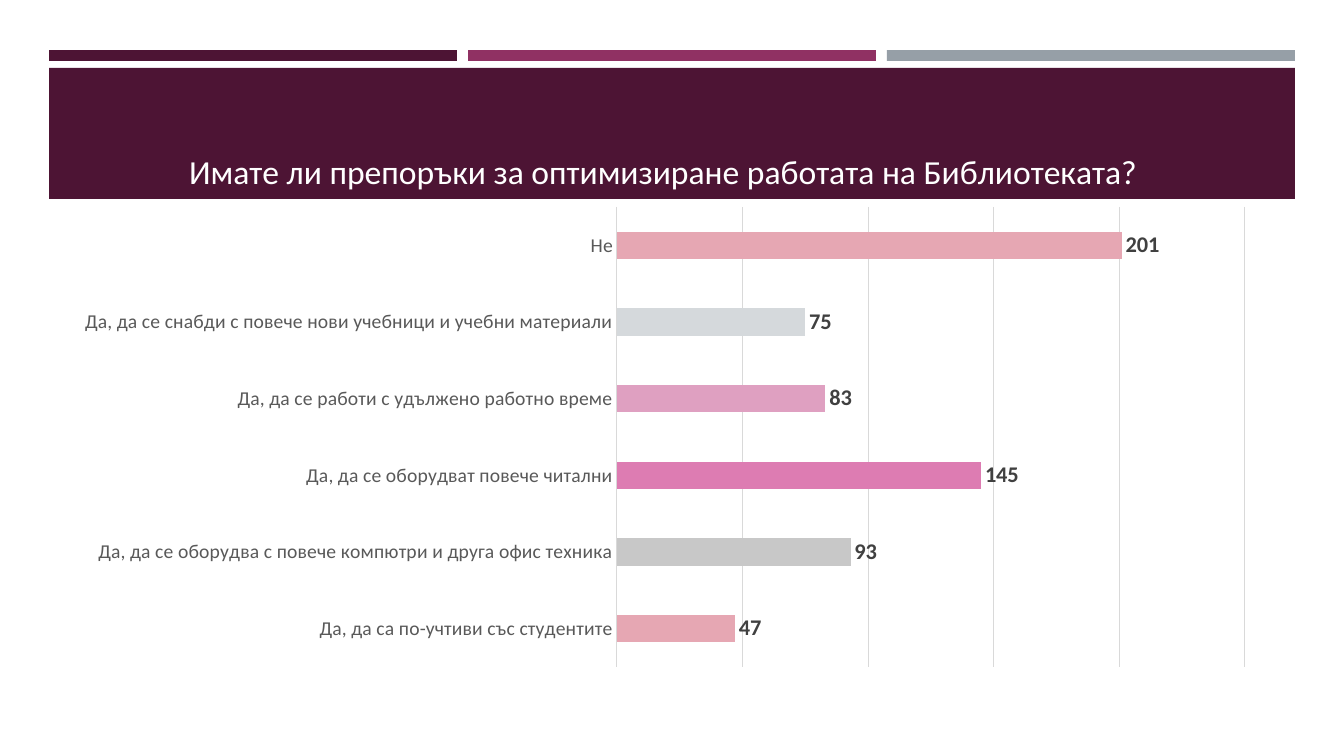
from dataclasses import dataclass

from lxml.etree import SubElement
from pptx import Presentation
from pptx.chart.chart import Chart
from pptx.chart.data import CategoryChartData
from pptx.dml.color import RGBColor
from pptx.enum.chart import XL_CHART_TYPE as ChartType
from pptx.enum.chart import XL_LABEL_POSITION as LabelPosition
from pptx.enum.chart import XL_TICK_LABEL_POSITION as TickLabelPosition
from pptx.enum.chart import XL_TICK_MARK as TickMark
from pptx.enum.shapes import MSO_SHAPE as Preset
from pptx.oxml.ns import qn
from pptx.slide import Slide
from pptx.util import Emu, Pt

EMU_PER_PX = 914400 / 100.8


@dataclass(frozen=True)
class Theme:
    plum: str = "4D1434"
    berry: str = "903163"
    slate: str = "969FA7"
    white: str = "FFFFFF"
    black: str = "000000"
    grid: str = "D9D9D9"
    category_text: str = "595959"
    value_text: str = "404040"
    rose: str = "E6A7B3"
    silver: str = "C8C8C8"
    pink: str = "DD7CB2"
    orchid: str = "DFA0C1"
    mist: str = "D5D9DC"
    chart_font: str = "Cabin"
    label_font: str = "Calibri"
    base_size: int = 10
    category_size: int = 14
    value_size: int = 16
    title_size: int = 24
    hairline: float = 0.75


@dataclass(frozen=True)
class Box:
    left: int
    top: int
    width: int
    height: int

    def emu(self) -> tuple[Emu, Emu, Emu, Emu]:
        return px(self.left), px(self.top), px(self.width), px(self.height)


@dataclass(frozen=True)
class Band:
    box: Box
    color: str


@dataclass(frozen=True)
class Answer:
    text: str
    count: int
    color: str


THEME = Theme()
STRIPE_PITCH = 419
STRIPE_COLORS = (THEME.plum, THEME.berry, THEME.slate)
BANDS = [
    Band(Box(49 + column * STRIPE_PITCH, 50, 408, 11), color)
    for column, color in enumerate(STRIPE_COLORS)
] + [Band(Box(49, 68, 1246, 131), THEME.plum)]

CHART_BOX = Box(60, 129, 1209, 549)
PLOT_BOX = Box(617, 207, 628, 460)
TITLE_BOX = Box(183, 143, 962, 56)
TITLE = "Имате ли препоръки за оптимизиране работата на Библиотеката?"
ANSWERS = [
    Answer("Да, да са по-учтиви със студентите", 47, THEME.rose),
    Answer("Да, да се оборудва с повече компютри и друга офис техника", 93, THEME.silver),
    Answer("Да, да се оборудват повече читални", 145, THEME.pink),
    Answer("Да, да се работи с удължено работно време", 83, THEME.orchid),
    Answer("Да, да се снабди с повече нови учебници и учебни материали", 75, THEME.mist),
    Answer("Не", 201, THEME.rose),
]


def px(length: int) -> Emu:
    return Emu(round(length * EMU_PER_PX))


def rgb(color: str) -> RGBColor:
    return RGBColor.from_string(color)


def style_font(font, size: int, color: str, name: str, bold: bool = False) -> None:
    font.size = Pt(size)
    font.color.rgb = rgb(color)
    font.name = name
    font.bold = bold


def style_line(line) -> None:
    line.color.rgb = rgb(THEME.grid)
    line.width = Pt(THEME.hairline)


def draw_band(page: Slide, band: Band) -> None:
    shape = page.shapes.add_shape(Preset.RECTANGLE, *band.box.emu())
    shape.shadow.inherit = False
    shape.fill.solid()
    shape.fill.fore_color.rgb = rgb(band.color)
    shape.line.fill.background()


def place_in_chart(part, index: int, box: Box, sized: bool) -> None:
    """Give a chart part a manual layout as fractions of the chart's box."""
    for old in part.findall(qn("c:layout")):
        part.remove(old)
    layout = SubElement(part, qn("c:layout"))
    part.insert(index, layout)
    manual = SubElement(layout, qn("c:manualLayout"))
    settings = {"xMode": "edge", "yMode": "edge"}
    if sized:
        settings = {"layoutTarget": "inner"} | settings
    settings["x"] = (box.left - CHART_BOX.left) / CHART_BOX.width
    settings["y"] = (box.top - CHART_BOX.top) / CHART_BOX.height
    if sized:
        settings["w"] = box.width / CHART_BOX.width
        settings["h"] = box.height / CHART_BOX.height
    for tag, value in settings.items():
        text = value if isinstance(value, str) else f"{value:.4f}"
        SubElement(manual, qn(f"c:{tag}")).set("val", text)


def style_title(chart: Chart) -> None:
    chart.has_title = True
    frame = chart.chart_title.text_frame
    frame.text = TITLE
    style_font(frame.paragraphs[0].font, THEME.title_size, THEME.white, THEME.label_font)
    title = chart.element.find(f".//{qn('c:title')}")
    place_in_chart(title, 1, TITLE_BOX, sized=False)


def style_axes(chart: Chart) -> None:
    categories = chart.category_axis
    categories.major_tick_mark = categories.minor_tick_mark = TickMark.NONE
    categories.tick_label_position = TickLabelPosition.NEXT_TO_AXIS
    categories.has_major_gridlines = False
    style_line(categories.format.line)
    style_font(
        categories.tick_labels.font, THEME.category_size, THEME.category_text, THEME.label_font
    )

    values = chart.value_axis
    values.visible = False
    values.minimum_scale, values.maximum_scale, values.major_unit = 0, 250, 50
    values.has_major_gridlines = True
    style_line(values.major_gridlines.format.line)


def style_bars(chart: Chart) -> None:
    plot = chart.plots[0]
    plot.gap_width = 182
    plot.vary_by_categories = False
    series = plot.series[0]
    series.format.fill.solid()
    series.format.fill.fore_color.rgb = rgb(THEME.rose)
    for index, answer in enumerate(ANSWERS):
        if answer.color != THEME.rose:
            fill = series.points[index].format.fill
            fill.solid()
            fill.fore_color.rgb = rgb(answer.color)
    labels = series.data_labels
    labels.show_value = True
    labels.position = LabelPosition.OUTSIDE_END
    style_font(labels.font, THEME.value_size, THEME.value_text, THEME.label_font, bold=True)


def draw_chart(page: Slide) -> None:
    data = CategoryChartData()
    data.categories = [answer.text for answer in ANSWERS]
    data.add_series("Series 1", [answer.count for answer in ANSWERS])
    chart = page.shapes.add_chart(ChartType.BAR_CLUSTERED, *CHART_BOX.emu(), data).chart
    chart.has_legend = False
    style_font(chart.font, THEME.base_size, THEME.black, THEME.chart_font)
    style_title(chart)
    style_axes(chart)
    style_bars(chart)
    place_in_chart(chart.element.find(f".//{qn('c:plotArea')}"), 0, PLOT_BOX, sized=True)


def main() -> None:
    deck = Presentation()
    deck.slide_width, deck.slide_height = px(1344), px(756)
    page = deck.slides.add_slide(deck.slide_layouts[6])
    for band in BANDS:
        draw_band(page, band)
    draw_chart(page)
    deck.save("out.pptx")


if __name__ == "__main__":
    main()
